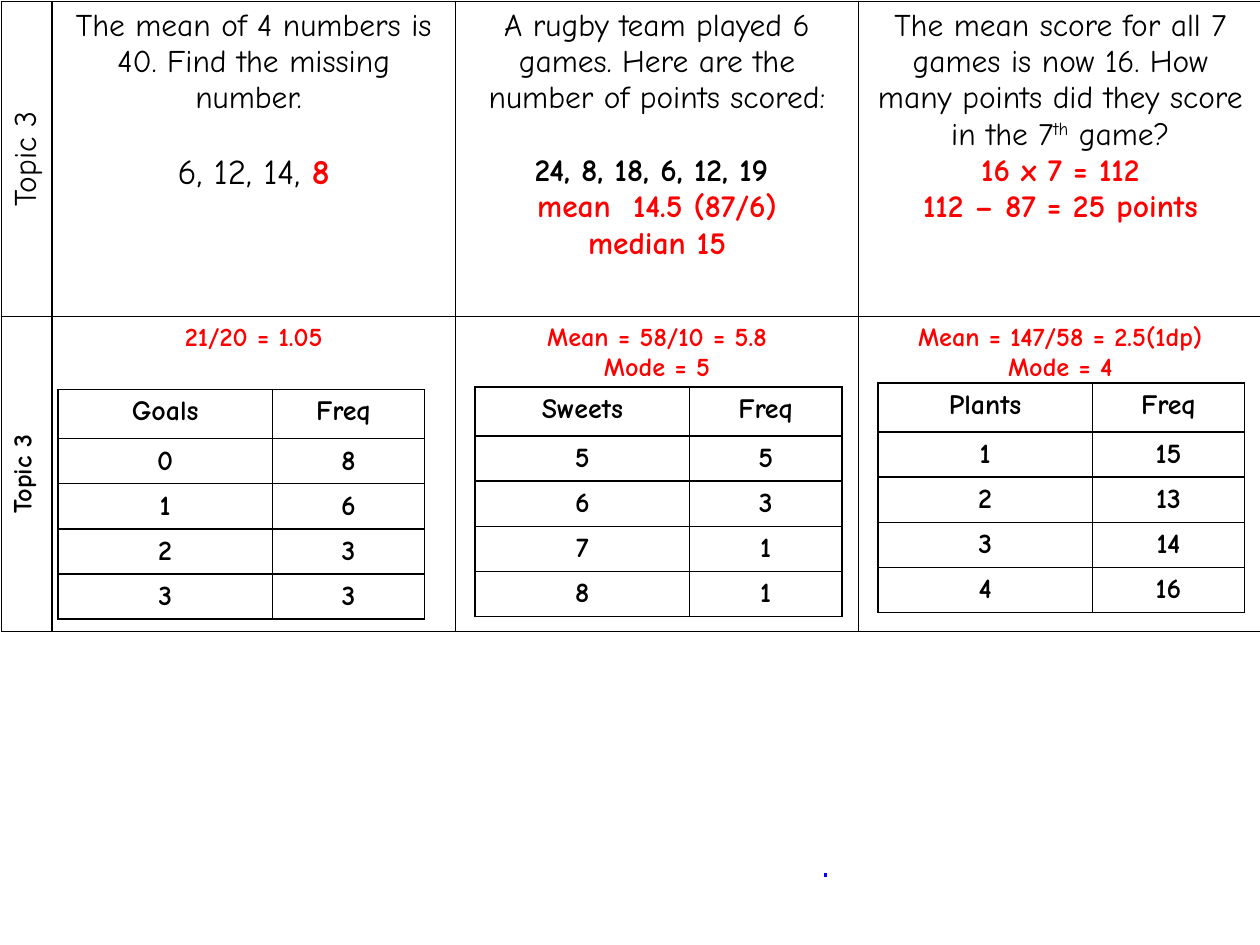
import pptx
import pptx.dml.color
import pptx.enum.text
import pptx.oxml
import pptx.oxml.ns
import pptx.util
from pptx.util import Cm

BLACK = pptx.dml.color.RGBColor(0, 0, 0)
RED = pptx.dml.color.RGBColor(255, 0, 0)
BLUE = pptx.dml.color.RGBColor(0, 0, 255)
FONT = "Comic Neue"
BLANK_LINE = 20.7  # points, the height of one 18 pt line


def add_grid(left, top, widths, heights):
    """Add an unfilled table with thin black borders."""
    grid = slide.shapes.add_table(
        len(heights), len(widths), left, top, sum(widths), sum(heights)).table
    grid.first_row = grid.horz_banding = False
    for column, width in zip(grid.columns, widths):
        column.width = width
    for row, height in zip(grid.rows, heights):
        row.height = height
    for cell in grid.iter_cells():
        borders = cell._tc.get_or_add_tcPr()
        for side in ("lnL", "lnR", "lnT", "lnB"):
            borders.append(pptx.oxml.parse_xml(
                f'<a:{side} {pptx.oxml.ns.nsdecls("a")} w="12700"><a:solidFill>'
                f'<a:srgbClr val="{BLACK}"/></a:solidFill></a:{side}>'))
        cell.fill.background()
    return grid


def write(cell, lines):
    """Write lines of (size, space before, runs); a run is (text, colour, bold)."""
    frame = cell.text_frame
    for index, (size, before, runs) in enumerate(lines):
        line = frame.add_paragraph() if index else frame.paragraphs[0]
        line.alignment = pptx.enum.text.PP_ALIGN.CENTER
        line.space_before = pptx.util.Pt(before)
        line.font.name = FONT
        line.font.size = pptx.util.Pt(size)
        for text, colour, bold in runs:
            run = line.add_run()
            run.text = text
            run.font.color.rgb = colour
            run.font.bold = bold
            if text == "th":
                run.font._element.set("baseline", "30000")


deck = pptx.Presentation()
deck.slide_width, deck.slide_height = Cm(25.4), Cm(19.05)
slide = deck.slides.add_slide(deck.slide_layouts[6])

# Question grid: a topic label and three questions in each row
questions = [
    [
        [(18, 0, [("Topic 3", BLACK, False)])],
        [(18, 0, [("The mean of 4 numbers is 40. Find the missing number. ", BLACK, False)]),
         (20, BLANK_LINE, [("6, 12, 14, ", BLACK, False), ("8", RED, True)])],
        [(18, 0, [("A rugby team played 6 games. Here are the number of points scored:",
                   BLACK, False)]),
         (18, BLANK_LINE, [("24, 8, 18, 6, 12, 19 ", BLACK, True)]),
         (18, 0, [("mean  14.5 (87/6)", RED, True)]),
         (18, 0, [("median 15", RED, True)])],
        [(18, 0, [("The mean score for all 7 games is now 16. How many points "
                   "did they score in the 7", BLACK, False),
                  ("th", BLACK, False), (" game?", BLACK, False)]),
         (18, 0, [("16 x 7 = 112", RED, True)]),
         (18, 0, [("112 – 87 = 25 points", RED, True)])],
    ],
    [
        [(15, 0, [("Topic 3", BLACK, True)])],
        [(15, 0, [("21/20 = 1.05", RED, True)])],
        [(15, 0, [("Mean = 58/10 = 5.8", RED, True)]),
         (15, 0, [("Mode = 5", RED, True)])],
        [(15, 0, [("Mean = 147/58 = 2.5(1dp)", RED, True)]),
         (15, 0, [("Mode = 4", RED, True)])],
    ],
]
question_grid = add_grid(Cm(0.03), Cm(0.03), [Cm(1.02)] + [Cm(8.13)] * 3, [Cm(6.35)] * 2)
for row, row_questions in enumerate(questions):
    for column, lines in enumerate(row_questions):
        write(question_grid.cell(row, column), lines)
    question_grid.cell(row, 0)._tc.get_or_add_tcPr().set("vert", "vert270")

# Small pen mark
pen = slide.shapes.build_freeform(Cm(16.64), Cm(17.68))
pen.add_line_segments([(Cm(16.64), Cm(y)) for y in (17.65, 17.63, 17.6)], close=False)
pen_mark = pen.convert_to_shape()
pen_mark.shadow.inherit = False
pen_mark.fill.background()
pen_mark.line.color.rgb = BLUE
pen_mark.line.width = pptx.util.Pt(1.5)

# Frequency tables
frequencies = [
    (9.58, 7.8, [("Sweets", "Freq"), (5, 5), (6, 3), (7, 1), (8, 1)]),
    (1.17, 7.85, [("Goals", "Freq "), (0, 8), (1, 6), (2, 3), (3, 3)]),
    (17.7, 7.72, [("Plants", "Freq"), (1, 15), (2, 13), (3, 14), (4, 16)]),
]
for left, top, counts in frequencies:
    frequency_table = add_grid(
        Cm(left), Cm(top), [Cm(4.32), Cm(3.07)], [Cm(0.99)] + [Cm(0.91)] * 4)
    for row, pair in enumerate(counts):
        for column, value in enumerate(pair):
            write(frequency_table.cell(row, column), [(16, 0, [(str(value), BLACK, True)])])

deck.save("out.pptx")
